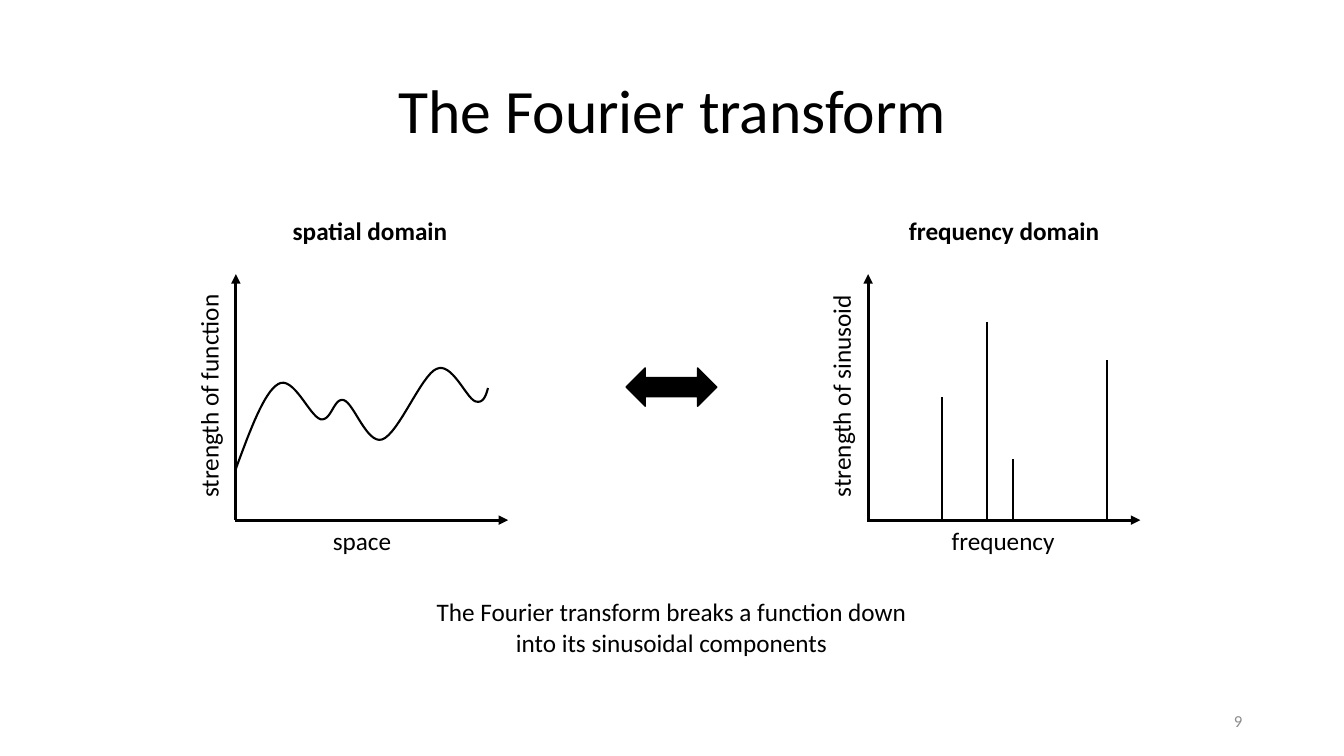
from lxml import etree
from pptx import Presentation
from pptx.dml.color import RGBColor
from pptx.enum import shapes, text
from pptx.oxml import ns
from pptx.util import Inches, Pt

BLACK = RGBColor(0x00, 0x00, 0x00)
GRAY = RGBColor(0x8C, 0x8C, 0x8C)
FONT = "Calibri"

TITLE = "The Fourier transform"
SUMMARY = ["The Fourier transform breaks a function down", "into its sinusoidal components"]
PAGE = "9"
DOMAINS = [
    {"heading": "spatial domain", "vertical": "strength of function", "horizontal": "space",
     "origin": 2.34, "heading_x": 3.67, "horizontal_x": 3.59},
    {"heading": "frequency domain", "vertical": "strength of sinusoid", "horizontal": "frequency",
     "origin": 8.61, "heading_x": 9.96, "horizontal_x": 9.95},
]
SINUSOIDS = [(9.34, 3.94), (9.79, 3.19), (10.05, 4.55), (10.98, 3.57)]
WAVE_START = (2.34, 4.65)
WAVE = [
    ((2.48, 4.27), (2.62, 3.89), (2.76, 3.81)),
    ((2.91, 3.72), (3.07, 4.13), (3.18, 4.16)),
    ((3.29, 4.18), (3.31, 3.94), (3.41, 3.97)),
    ((3.51, 4.00), (3.64, 4.41), (3.79, 4.36)),
    ((3.95, 4.31), (4.18, 3.72), (4.33, 3.66)),
    ((4.48, 3.59), (4.62, 3.94), (4.71, 3.98)),
    ((4.79, 4.01), (4.82, 3.93), (4.84, 3.85)),
]
BASE, AXIS_TOP, AXIS_LENGTH = 5.16, 2.72, 2.7
LABEL_WIDTH, LABEL_HEIGHT = 2.3, 0.4
STEPS = 16


def write(frame, lines, size=18, bold=False, color=BLACK,
          align=text.PP_ALIGN.CENTER, anchor=text.MSO_ANCHOR.TOP):
    frame.word_wrap = True
    frame.vertical_anchor = anchor
    for i, line in enumerate(lines):
        paragraph = frame.paragraphs[0] if i == 0 else frame.add_paragraph()
        paragraph.alignment = align
        run = paragraph.add_run()
        run.text = line
        run.font.name = FONT
        run.font.size = Pt(size)
        run.font.bold = bold
        run.font.color.rgb = color


def add_label(slide, lines, center_x, top, width=LABEL_WIDTH, height=LABEL_HEIGHT,
              rotation=0, **style):
    label = slide.shapes.add_textbox(Inches(center_x - width / 2), Inches(top),
                                     Inches(width), Inches(height))
    label.rotation = rotation
    write(label.text_frame, lines, **style)


def add_line(slide, start, end, weight, arrow=False):
    line = slide.shapes.add_connector(shapes.MSO_CONNECTOR.STRAIGHT,
                                      *(Inches(v) for v in start + end))
    line.line.color.rgb = BLACK
    line.line.width = Pt(weight)
    if arrow:
        etree.SubElement(line.line._get_or_add_ln(), ns.qn("a:tailEnd"), type="triangle")
    etree.SubElement(line._element.spPr, ns.qn("a:effectLst"))


def bezier(start, first, second, end, t):
    weights = ((1 - t) ** 3, 3 * t * (1 - t) ** 2, 3 * t ** 2 * (1 - t), t ** 3)
    points = (start, first, second, end)
    return tuple(Inches(sum(w * p[axis] for w, p in zip(weights, points))) for axis in (0, 1))


def add_wave(slide):
    points = []
    start = WAVE_START
    for first, second, end in WAVE:
        points += [bezier(start, first, second, end, i / STEPS) for i in range(1, STEPS + 1)]
        start = end
    builder = slide.shapes.build_freeform(*(Inches(v) for v in WAVE_START))
    builder.add_line_segments(points, close=False)
    wave = builder.convert_to_shape()
    wave.shadow.inherit = False
    wave.fill.background()
    wave.line.color.rgb = BLACK
    wave.line.width = Pt(1.5)


def add_domain(slide, domain):
    origin = domain["origin"]
    add_label(slide, [domain["heading"]], domain["heading_x"], 2.09, bold=True)
    add_line(slide, (origin, BASE), (origin, AXIS_TOP), 2.25, arrow=True)
    add_line(slide, (origin - 0.01, BASE), (origin + AXIS_LENGTH, BASE), 2.25, arrow=True)
    add_label(slide, [domain["vertical"]], origin - 0.27, 3.73, rotation=270)
    add_label(slide, [domain["horizontal"]], domain["horizontal_x"], 5.16)


def main():
    deck = Presentation()
    deck.slide_width, deck.slide_height = Inches(13.33), Inches(7.5)
    slide = deck.slides.add_slide(deck.slide_layouts[5])

    title = slide.shapes.title
    title.left, title.top = Inches(0.92), Inches(0.4)
    title.width, title.height = Inches(11.5), Inches(1.45)
    write(title.text_frame, [TITLE], size=44, anchor=text.MSO_ANCHOR.MIDDLE)
    title.text_frame.paragraphs[0].line_spacing = 0.9

    exchange = slide.shapes.add_shape(shapes.MSO_SHAPE.LEFT_RIGHT_ARROW, Inches(6.21),
                                      Inches(3.65), Inches(0.9), Inches(0.38))
    exchange.shadow.inherit = False
    exchange.fill.solid()
    exchange.fill.fore_color.rgb = BLACK
    exchange.line.color.rgb = BLACK
    exchange.line.width = Pt(1)

    for domain in DOMAINS:
        add_domain(slide, domain)
    add_wave(slide)
    for x, peak in SINUSOIDS:
        add_line(slide, (x, BASE), (x, peak), 1.5)

    add_label(slide, SUMMARY, 6.66, 5.87, width=5, height=0.71)
    add_label(slide, [PAGE], 10.92, 6.95, width=3, size=12, color=GRAY,
              align=text.PP_ALIGN.RIGHT, anchor=text.MSO_ANCHOR.MIDDLE)
    deck.save("out.pptx")


if __name__ == "__main__":
    main()
